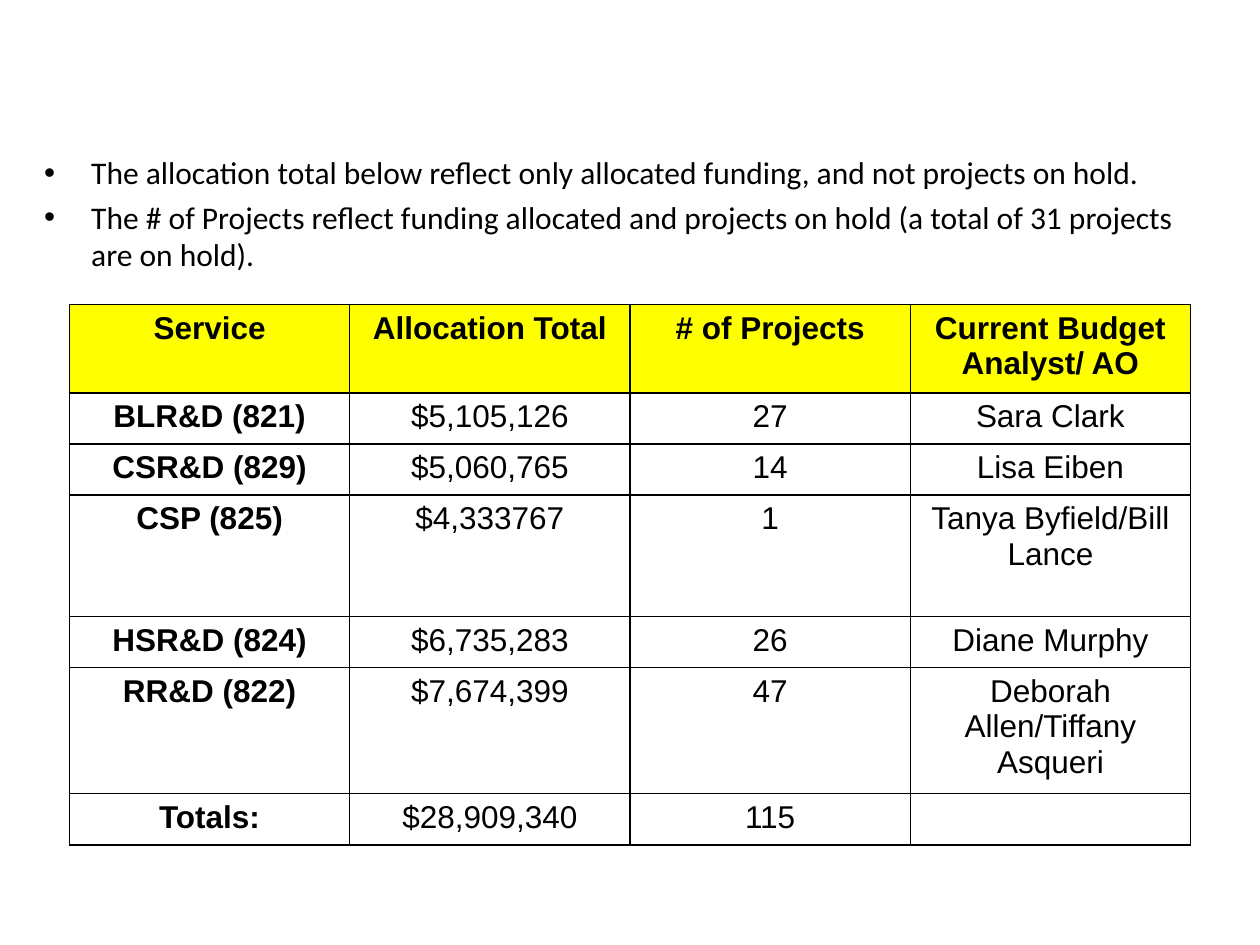
"""Build a slide with funding notes and an allocation table by service."""
from lxml.etree import SubElement
from pptx import Presentation
from pptx.dml.color import RGBColor
from pptx.enum.text import PP_ALIGN
from pptx.oxml.ns import qn
from pptx.util import Cm, Pt

COLORS = {"text": "000000", "border": "000000", "header": "FFFF00"}
NOTES = [
    "The allocation total below reflect only allocated funding, and not projects on hold.",
    "The # of Projects reflect funding allocated and projects on hold "
    "(a total of 31 projects are on hold).",
]
ROWS = [
    ("Service", "Allocation Total", "# of Projects", "Current Budget Analyst/ AO"),
    ("BLR&D (821)", "$5,105,126", "27", "Sara Clark"),
    ("CSR&D (829)", "$5,060,765", "14", "Lisa Eiben"),
    ("CSP (825)", "$4,333767", "1", "Tanya Byfield/Bill Lance"),
    ("HSR&D (824)", "$6,735,283", "26", "Diane Murphy"),
    ("RR&D (822)", "$7,674,399", "47", "Deborah Allen/Tiffany Asqueri"),
    ("Totals:", "$28,909,340", "115", ""),
]
ROW_HEIGHTS = [1.67, 1.03, 1.03, 2.45, 1.03, 2.38, 1.03]


def add_span(para, text, font_name, bold=False):
    span = para.add_run()
    span.text = text
    span.font.name = font_name
    span.font.size = Pt(18)
    span.font.bold = bold
    span.font.color.rgb = RGBColor.from_string(COLORS["text"])


def add_borders(cell):
    properties = cell._tc.get_or_add_tcPr()
    for side in ("a:lnL", "a:lnR", "a:lnT", "a:lnB"):
        line = SubElement(properties, qn(side), w=str(Pt(1)))
        fill = SubElement(line, qn("a:solidFill"))
        SubElement(fill, qn("a:srgbClr"), val=COLORS["border"])


deck = Presentation()
deck.slide_width, deck.slide_height = Cm(25.4), Cm(19.05)
page = deck.slides.add_slide(deck.slide_layouts[6])

box = page.shapes.add_textbox(Cm(0.64), Cm(2.97), Cm(24.13), Cm(2.72))
frame = box.text_frame
frame.word_wrap = True
for index, note in enumerate(NOTES):
    para = frame.add_paragraph() if index else frame.paragraphs[0]
    properties = para._p.get_or_add_pPr()
    properties.set("marL", str(Cm(0.95)))
    properties.set("indent", str(-Cm(0.95)))
    SubElement(properties, qn("a:buFont"), typeface="Arial")
    SubElement(properties, qn("a:buChar"), char="•")
    if index:
        para.space_before = Pt(3.6)
    add_span(para, note, "Calibri")

table = page.shapes.add_table(
    len(ROWS), len(ROWS[0]), Cm(1.4), Cm(6.14), Cm(22.6), Cm(sum(ROW_HEIGHTS))
).table
table.horz_banding = False
for column in table.columns:
    column.width = Cm(22.6 / len(ROWS[0]))
for row_index, (values, height) in enumerate(zip(ROWS, ROW_HEIGHTS)):
    table.rows[row_index].height = Cm(height)
    for column_index, value in enumerate(values):
        cell = table.cell(row_index, column_index)
        add_borders(cell)
        if row_index == 0:
            cell.fill.solid()
            cell.fill.fore_color.rgb = RGBColor.from_string(COLORS["header"])
        else:
            cell.fill.background()
        para = cell.text_frame.paragraphs[0]
        para.alignment = PP_ALIGN.CENTER
        if value:
            add_span(para, value, "Arial", bold=row_index == 0 or column_index == 0)

deck.save("out.pptx")
